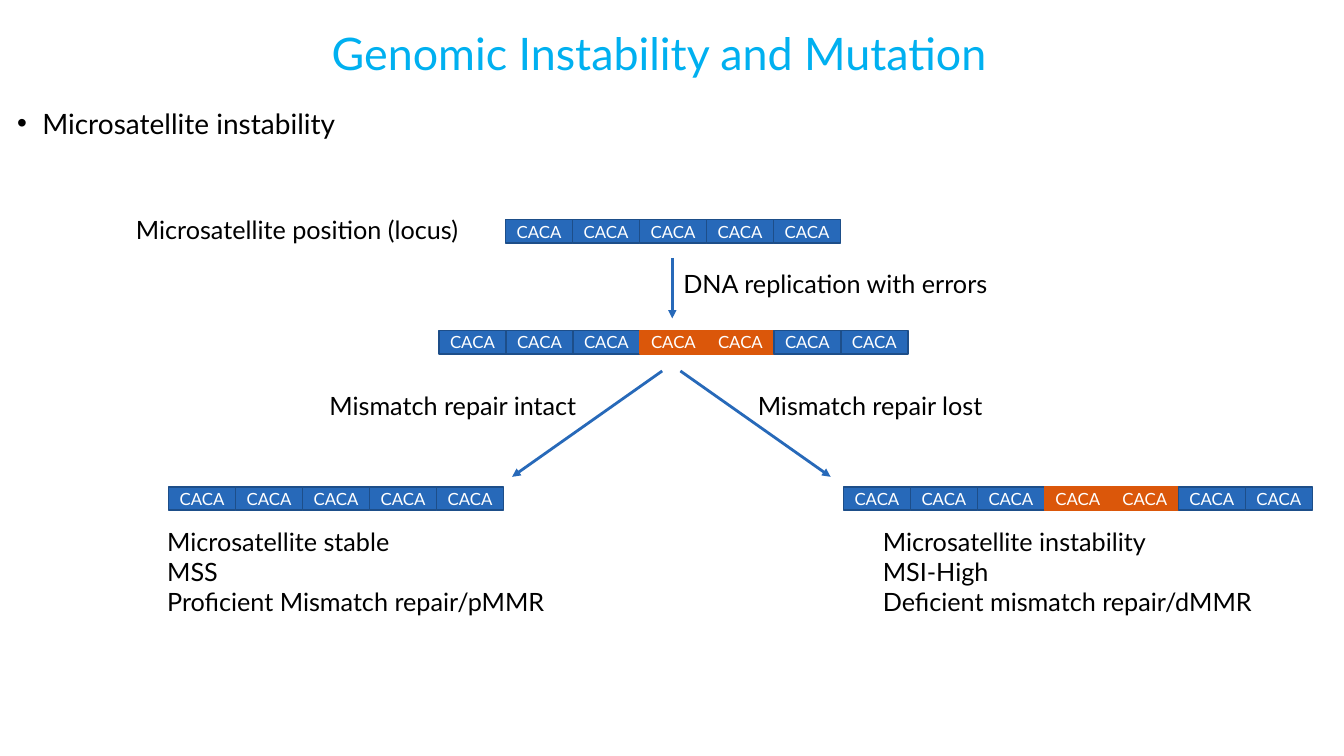
import lxml.etree
import pptx
import pptx.dml.color
import pptx.enum.shapes
import pptx.enum.text
import pptx.oxml.ns
import pptx.util

Pt = pptx.util.Pt
Align = pptx.enum.text.PP_ALIGN
Anchor = pptx.enum.text.MSO_ANCHOR
BLUE, NAVY, ORANGE = "2769B9", "1D4E89", "DB570A"
WHITE, BLACK, SKY = "FFFFFF", "000000", "00B0F0"
TOP_LEFT = {"word_wrap": True, "vertical_anchor": Anchor.TOP,
            "auto_size": pptx.enum.text.MSO_AUTO_SIZE.NONE}
CELL_FRAME = {"word_wrap": False, "vertical_anchor": Anchor.MIDDLE,
              "margin_left": 0, "margin_right": 0, "margin_top": 0, "margin_bottom": 0}


def colour(target, value):
    target.rgb = pptx.dml.color.RGBColor.from_string(value)


def apply_format(target, values):
    for name, value in values.items():
        setattr(target, name, value)


def add_child(parent, tag, **attributes):
    return lxml.etree.SubElement(parent, pptx.oxml.ns.qn(tag), attributes)


class MutationPage:
    font_name = "Lato"
    cell_width = 47.85
    cell_height = 16.6

    def __init__(self, deck):
        self.page = deck.slides.add_slide(deck.slide_layouts[1])

    def fill_text(self, box, lines, size, value, frame_format, para_format):
        frame = box.text_frame
        apply_format(frame, frame_format)
        for index, line in enumerate(lines):
            para = frame.add_paragraph() if index else frame.paragraphs[0]
            apply_format(para, para_format)
            span = para.add_run()
            span.text = line
            apply_format(span.font, {"name": self.font_name, "size": Pt(size)})
            colour(span.font.color, value)

    def place(self, box, left, top, width, height):
        apply_format(box, {"left": Pt(left), "top": Pt(top),
                           "width": Pt(width), "height": Pt(height)})

    def title(self, text, *area):
        box = self.page.shapes.title
        self.place(box, *area)
        self.fill_text(box, [text], 32, SKY, TOP_LEFT,
                       {"alignment": Align.LEFT, "line_spacing": 0.9})

    def bullets(self, lines, *area):
        box = self.page.placeholders[1]
        self.place(box, *area)
        self.fill_text(box, lines, 20, BLACK, TOP_LEFT,
                       {"line_spacing": 0.9, "space_before": Pt(0)})
        for para in box.text_frame.paragraphs:
            properties = para._p.get_or_add_pPr()
            properties.set("marL", str(Pt(18)))
            properties.set("indent", str(Pt(-18)))
            add_child(properties, "a:buFont", typeface="Arial")
            add_child(properties, "a:buChar", char="•")

    def label(self, lines, left, top, width):
        height = 7.2 + 21.6 * len(lines)
        box = self.page.shapes.add_textbox(Pt(left), Pt(top), Pt(width), Pt(height))
        self.fill_text(box, lines, 18, BLACK, TOP_LEFT, {"alignment": Align.LEFT})

    def repeats(self, left, top, count, errors=()):
        for index in range(count):
            cell = self.page.shapes.add_shape(
                pptx.enum.shapes.MSO_SHAPE.RECTANGLE, Pt(left + index * self.cell_width), Pt(top),
                Pt(self.cell_width), Pt(self.cell_height))
            cell.shadow.inherit = False
            cell.fill.solid()
            colour(cell.fill.fore_color, ORANGE if index in errors else BLUE)
            colour(cell.line.color, ORANGE if index in errors else NAVY)
            cell.line.width = Pt(1)
            self.fill_text(cell, ["CACA"], 12, WHITE, CELL_FRAME, {"alignment": Align.CENTER})

    def arrow(self, *ends):
        arrow = self.page.shapes.add_connector(
            pptx.enum.shapes.MSO_CONNECTOR.STRAIGHT, *[Pt(value) for value in ends])
        colour(arrow.line.color, BLUE)
        arrow.line.width = Pt(2)
        add_child(arrow.line._get_or_add_ln(), "a:tailEnd", type="triangle")
        add_child(arrow._element.spPr, "a:effectLst")


def main():
    deck = pptx.Presentation()
    apply_format(deck, {"slide_width": Pt(960), "slide_height": Pt(540)})
    page = MutationPage(deck)
    page.title("Genomic Instability and Mutation", 229.7, 19.4, 501, 56)
    page.bullets(["Microsatellite instability"], 5, 74.9, 955, 33)

    inserted = (3, 4)
    page.repeats(361.2, 157, 5)
    page.repeats(313.6, 236.2, 7, inserted)
    page.repeats(120.5, 347.8, 5)
    page.repeats(602.5, 347.8, 7, inserted)

    page.arrow(480.2, 184.3, 480.2, 227.5)
    page.arrow(473, 265, 365.8, 340.6)
    page.arrow(486, 265, 593.3, 340.6)

    page.label(["Microsatellite position (locus)"], 90, 149.8, 256.3)
    page.label(["DNA replication with errors"], 481, 187.9, 240.5)
    page.label(["Mismatch repair intact"], 228.2, 275, 198)
    page.label(["Mismatch repair lost"], 534.2, 275, 198)
    page.label(["Microsatellite stable", "MSS", "Proficient Mismatch repair/pMMR"],
               112.3, 372.2, 303)
    page.label(["Microsatellite instability", "MSI-High", "Deficient mismatch repair/dMMR"],
               623.5, 372.2, 291.6)
    deck.save("out.pptx")


if __name__ == "__main__":
    main()
